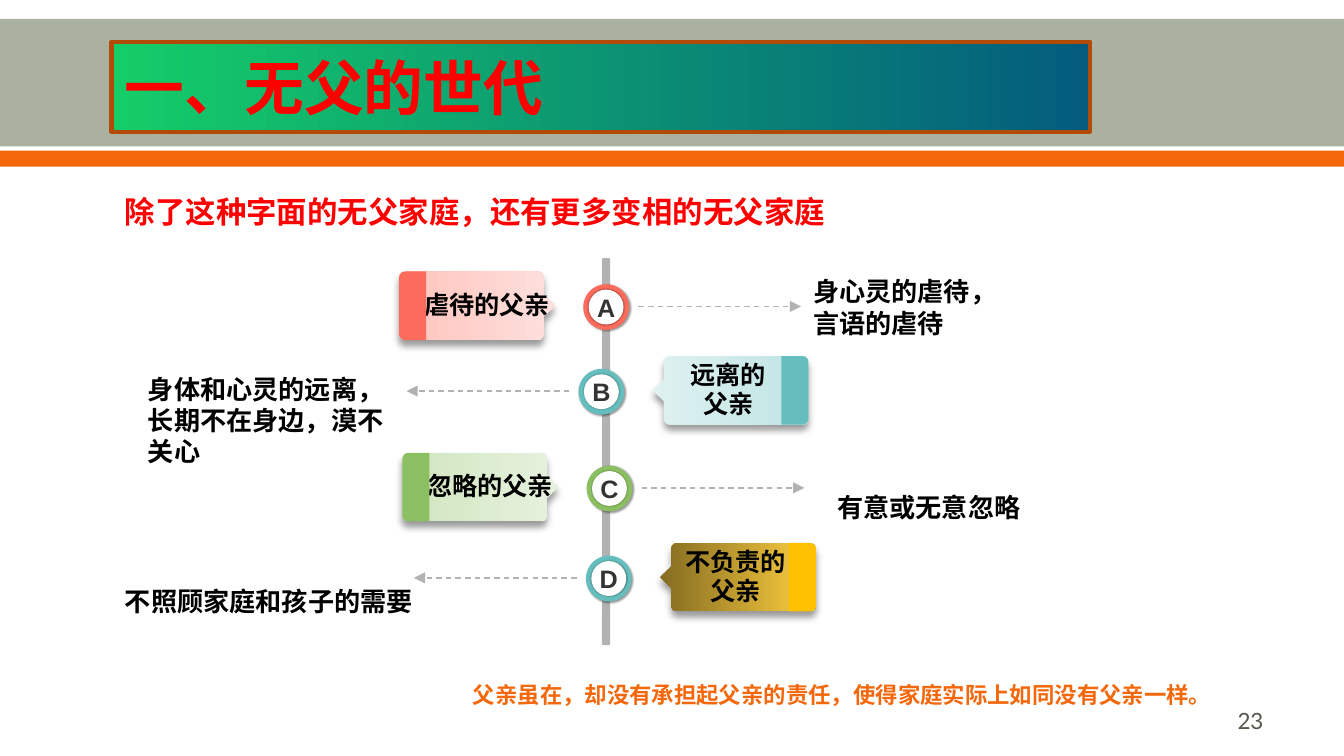
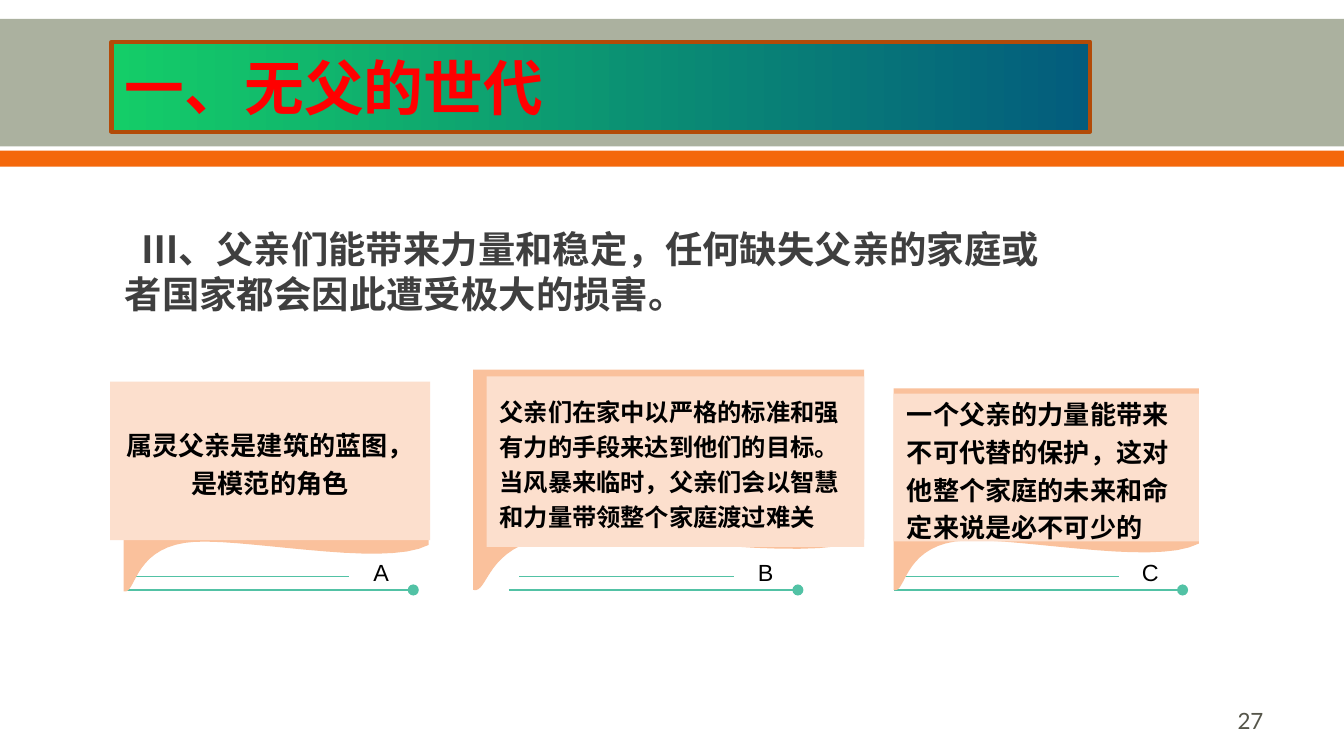
from math import cos, pi, sin

from lxml.etree import SubElement
from pptx import Presentation
from pptx.dml.color import RGBColor
from pptx.enum.dml import MSO_LINE
from pptx.enum.shapes import MSO_CONNECTOR, MSO_SHAPE
from pptx.enum.text import MSO_ANCHOR, MSO_AUTO_SIZE, PP_ALIGN
from pptx.oxml.ns import qn
from pptx.util import Inches, Pt

COLUMNS, ROWS = 100, 56.25
CELL = Inches(10) // COLUMNS

SAGE = RGBColor(0xAB, 0xB1, 0x9F)
ORANGE = RGBColor(0xF4, 0x68, 0x0B)
RUST = RGBColor(0xB2, 0x4B, 0x08)
TITLE_GREEN = RGBColor(0x14, 0xCD, 0x68)
TITLE_BLUE = RGBColor(0x03, 0x5C, 0x7D)
RED = RGBColor(0xFF, 0x00, 0x00)
BLACK = RGBColor(0x00, 0x00, 0x00)
WHITE = RGBColor(0xFF, 0xFF, 0xFF)
CHARCOAL = RGBColor(0x33, 0x33, 0x33)
SLATE = RGBColor(0x3F, 0x3F, 0x3F)
NUMBER_GREY = RGBColor(0x55, 0x55, 0x4A)
GREY = RGBColor(0xB2, 0xB2, 0xB2)
CORAL = RGBColor(0xFC, 0x6C, 0x5C)
CORAL_MID = RGBColor(0xFE, 0xC3, 0xBC)
CORAL_PALE = RGBColor(0xFE, 0xE0, 0xDD)
TEAL = RGBColor(0x65, 0xBE, 0xBD)
TEAL_MID = RGBColor(0xC0, 0xE4, 0xE4)
TEAL_PALE = RGBColor(0xDF, 0xF1, 0xF1)
GREEN = RGBColor(0x8C, 0xBF, 0x62)
GREEN_MID = RGBColor(0xD0, 0xE5, 0xBF)
GREEN_PALE = RGBColor(0xE7, 0xF2, 0xDE)
GOLD = RGBColor(0xFF, 0xC0, 0x00)
GOLD_MID = RGBColor(0xFE, 0xCF, 0x40)
GOLD_DARK = RGBColor(0x84, 0x6C, 0x21)
PEACH = RGBColor(0xFA, 0xC1, 0x9C)
PEACH_PALE = RGBColor(0xFC, 0xDF, 0xCD)
MINT = RGBColor(0x52, 0xC2, 0xA5)

LATIN, CJK, NUMBER = "Arial", "Noto Sans CJK SC", "Lato"
PADDED, TIGHT = (1, 0.5, 1, 0.5), (0, 0, 0, 0)
# Shadows: blur and distance in points, direction in degrees
RING_SHADOW, DISC_SHADOW, TAG_SHADOW = (1, 1, 45), (1, 0, 0), (4, 3, 90)


def cells(*values):
    return [round(v * CELL) for v in values]


def bezier(p0, p1, p2, p3, steps=16):
    """Points along a cubic curve, without its start."""
    points = []
    for i in range(1, steps + 1):
        t = i / steps
        weights = ((1 - t) ** 3, 3 * t * (1 - t) ** 2, 3 * t * t * (1 - t), t ** 3)
        points.append(tuple(sum(w * p[k] for w, p in zip(weights, (p0, p1, p2, p3)))
                            for k in (0, 1)))
    return points


def corner(cx, cy, radius, start, steps=6):
    """Points of a quarter circle, clockwise from the start angle."""
    angles = (start + pi / 2 * i / steps for i in range(steps + 1))
    return [(cx + radius * cos(a), cy + radius * sin(a)) for a in angles]


class Deck:
    def __init__(self):
        self.prs = Presentation()
        self.prs.slide_width, self.prs.slide_height = cells(COLUMNS, ROWS)
        self.layout = self.prs.slide_layouts[5]
        self.s = None

    def bands(self):
        """Put the two full-width bands on the shared layout."""
        for top, height, color in ((1.4, 9.5, SAGE), (11.2, 1.2, ORANGE)):
            band = self.shape(MSO_SHAPE.RECTANGLE, (0, top, COLUMNS, height), color)
            self.layout.shapes._spTree.append(band._element)

    def slide(self, title, number):
        first = self.s is None
        self.s = self.prs.slides.add_slide(self.layout)
        if first:
            self.bands()
        sp = self.s.shapes.title
        sp.left, sp.top, sp.width, sp.height = cells(8.3, 3.1, 72.8, 6.7)
        geom = SubElement(sp._element.spPr, qn("a:prstGeom"), prst="flowChartAlternateProcess")
        SubElement(geom, qn("a:avLst"))
        self.paint(sp, (TITLE_GREEN, TITLE_BLUE))
        sp.line.color.rgb, sp.line.width = RUST, Pt(2.22)
        self.fill_text(sp, [title], 32, RED, align=PP_ALIGN.JUSTIFY)
        self.text((71.7, 52.1, 23.3, 3), number, 12, NUMBER_GREY, font=NUMBER,
                  bold=False, align=PP_ALIGN.RIGHT)

    def paint(self, sp, fill):
        """Fill with one colour, or left to right with a pair."""
        if isinstance(fill, RGBColor):
            sp.fill.solid()
            sp.fill.fore_color.rgb = fill
            return
        sp.fill.gradient()
        sp.fill.gradient_angle = 0
        for stop, color in zip(sp.fill.gradient_stops, fill):
            stop.color.rgb = color

    def finish(self, sp, fill, shadow=None):
        sp.shadow.inherit = False
        sp.line.fill.background()
        self.paint(sp, fill)
        if shadow:
            blur, dist, angle = shadow
            effects = sp._element.spPr.find(qn("a:effectLst"))
            outer = SubElement(effects, qn("a:outerShdw"), blurRad=str(Pt(blur)),
                               dist=str(Pt(dist)), dir=str(angle * 60000),
                               algn="ctr", rotWithShape="0")
            color = SubElement(outer, qn("a:srgbClr"), val=str(BLACK))
            SubElement(color, qn("a:alpha"), val="40000")
        return sp

    def shape(self, kind, box, fill, shadow=None):
        return self.finish(self.s.shapes.add_shape(kind, *cells(*box)), fill, shadow)

    def outline(self, points, fill, shadow=None):
        start, *rest = [cells(*p) for p in points]
        builder = self.s.shapes.build_freeform(*start, scale=1.0)
        builder.add_line_segments(rest, close=True)
        return self.finish(builder.convert_to_shape(), fill, shadow)

    def line(self, start, end, color, tail=None, dash=None):
        cx = self.s.shapes.add_connector(MSO_CONNECTOR.STRAIGHT, *cells(*start, *end))
        cx.line.color.rgb, cx.line.width = color, Pt(0.75)
        if dash:
            cx.line.dash_style = dash
        if tail:
            SubElement(cx._element.spPr.find(qn("a:ln")), qn("a:tailEnd"), type=tail)
        SubElement(cx._element.spPr, qn("a:effectLst"))

    def text(self, box, text, size, color, **style):
        sp = self.s.shapes.add_textbox(*cells(*box))
        self.fill_text(sp, [text], size, color, **style)

    def fill_text(self, sp, lines, size, color, font=LATIN, bold=True, align=PP_ALIGN.LEFT,
                  spacing=1.0, insets=PADDED, anchor=MSO_ANCHOR.MIDDLE, indent=0):
        tf = sp.text_frame
        tf.word_wrap, tf.auto_size, tf.vertical_anchor = True, MSO_AUTO_SIZE.NONE, anchor
        tf.margin_left, tf.margin_top, tf.margin_right, tf.margin_bottom = cells(*insets)
        for i, line in enumerate(lines):
            p = tf.add_paragraph() if i else tf.paragraphs[0]
            p.alignment, p.line_spacing = align, spacing
            if indent:
                p._p.get_or_add_pPr().set("indent", str(cells(indent)[0]))
            r = p.add_run()
            r.text = line
            f = r.font
            f.size, f.bold, f.name = Pt(size), bold, font
            f.color.rgb = color
            if font != NUMBER:
                SubElement(r._r.get_or_add_rPr(), qn("a:ea"), typeface=CJK)

    def father(self, letter, axis, top, side, lines, ring, color, shades):
        """One timeline row: ring, tag and arrow; side 1 puts the tag on the left."""
        def place(points):
            return [(axis - side * (15.4 - x), top + y) for x, y in points]

        radius, height = 0.45, 5.1
        outer_edge = (corner(radius, height - radius, radius, pi / 2)
                      + corner(radius, radius, radius, pi))
        body = (outer_edge + corner(10.75 - radius, radius, radius, -pi / 2)
                + [(10.75, 1.75), (11.6, 2.55), (10.75, 3.35)]
                + corner(10.75 - radius, height - radius, radius, 0))
        self.shape(MSO_SHAPE.OVAL, (axis - 1.7, top + 0.95, 3.4, 3.4), ring, RING_SHADOW)
        tag = self.outline(place(body), shades[::side], TAG_SHADOW)
        self.fill_text(tag, lines, 13.5, BLACK, font=CJK, align=PP_ALIGN.CENTER, spacing=0.96,
                       insets=(1.5, 0, 0, 0) if side > 0 else (0, 0, 0.3, 0))
        self.outline(place(outer_edge + [(2, 0), (2, height)]), color)
        disc = self.shape(MSO_SHAPE.OVAL, (axis - 1.3, top + 1.35, 2.6, 2.6), WHITE, DISC_SHADOW)
        self.fill_text(disc, [letter], 13.5, CHARCOAL, align=PP_ALIGN.CENTER, insets=TIGHT)
        y = top + 2.6
        self.line((axis + side * 2.4, y), (axis + side * 14.5, y), GREY,
                  tail="triangle", dash=MSO_LINE.DASH)

    def fold(self, left, top, width, height):
        """A sheet whose lower edge curls up from the left corner."""
        a, b, c = (1, 0.77), (0.2, 0.76), (0, 1)
        points = [(0, 0), (1, 0), a]
        points += bezier(a, (0.85, 0.89), (0.36, 0.72), b)
        points += bezier(b, (0.03, 0.8), (0.04, 1.02), c)
        self.outline([(left + x * width, top + y * height) for x, y in points], PEACH)


def fathers_slide(deck):
    deck.slide("一、无父的世代", "23")
    deck.text((8.3, 12.8, 56.7, 5.6), "除了这种字面的无父家庭，还有更多变相的无父家庭",
              16.3, RED, font=CJK, spacing=1.1)
    bar = deck.shape(MSO_SHAPE.ROUNDED_RECTANGLE, (44.8, 19.2, 0.6, 28.8), GREY)
    bar.adjustments[0] = 0.17
    rows = (
        ("A", 45.1, 20.2, 1, ["虐待的父亲"], CORAL, CORAL, (CORAL_MID, CORAL_PALE)),
        ("C", 45.35, 33.7, 1, ["忽略的父亲"], GREEN, GREEN, (GREEN_MID, GREEN_PALE)),
        ("B", 44.75, 26.5, -1, ["远离的", "父亲"], TEAL, TEAL, (TEAL_MID, TEAL_PALE)),
        ("D", 45.3, 40.4, -1, ["不负责的", "父亲"], TEAL, GOLD, (GOLD_MID, GOLD_DARK)),
    )
    for row in rows:
        deck.father(*row)
    notes = (
        ((60.5, 20.4, 15.2, 4.9), "身心灵的虐待，言语的虐待"),
        ((11, 28.6, 18.9, 5.3), "身体和心灵的远离，长期不在身边，漠不关心"),
        ((62.3, 35.1, 16.4, 5.3), "有意或无意忽略"),
        ((9.3, 42.1, 22.3, 5.3), "不照顾家庭和孩子的需要"),
    )
    for box, note in notes:
        deck.text(box, note, 14, BLACK, insets=TIGHT)
    deck.text((34.2, 50.2, 57.5, 3), "父亲虽在，却没有承担起父亲的责任，使得家庭实际上如同没有父亲一样。",
              12, ORANGE, font=CJK, anchor=MSO_ANCHOR.TOP)


def strength_slide(deck):
    deck.slide("一、无父的世代", "27")
    cards = (
        ("A", (9.2, 29, 22.7, 15), (8.2, 28.4, 23.8, 11.8), 14, PP_ALIGN.CENTER,
         "属灵父亲是建筑的蓝图，是模范的角色"),
        ("B", (35.2, 27.5, 29.1, 16.4), (36.2, 28, 28.1, 12.7), 13, PP_ALIGN.LEFT,
         "父亲们在家中以严格的标准和强有力的手段来达到他们的目标。"
         "当风暴来临时，父亲们会以智慧和力量带领整个家庭渡过难关"),
        ("C", (66.5, 28.9, 22.7, 15), (66.5, 29.3, 22.7, 11), 14, PP_ALIGN.LEFT,
         "一个父亲的力量能带来不可代替的保护，这对他整个家庭的未来和命定来说是必不可少的"),
    )
    for i, (letter, sheet, panel, size, align, words) in enumerate(cards):
        x = 9.25 + 28.62 * i
        deck.line((x + 0.75, 42.9), (x + 16.75, 42.9), MINT)
        deck.line((x, 43.9), (x + 21.5, 43.9), MINT, tail="oval")
        deck.fold(*sheet)
        deck.text((x + 17.05, 40.8, 4.1, 3.2), letter, 12.5, BLACK, bold=False,
                  align=PP_ALIGN.CENTER, spacing=1.2)
        sp = deck.shape(MSO_SHAPE.RECTANGLE, panel, PEACH_PALE)
        deck.fill_text(sp, [words], size, BLACK, font=CJK, align=align, spacing=1.2)
    deck.text((8.3, 17.5, 71, 5.3),
              "Ⅲ、父亲们能带来力量和稳定，任何缺失父亲的家庭或者国家都会因此遭受极大的损害。",
              20, SLATE, font=CJK, indent=1.25)


def main():
    deck = Deck()
    fathers_slide(deck)
    strength_slide(deck)
    deck.prs.save("out.pptx")


if __name__ == "__main__":
    main()
